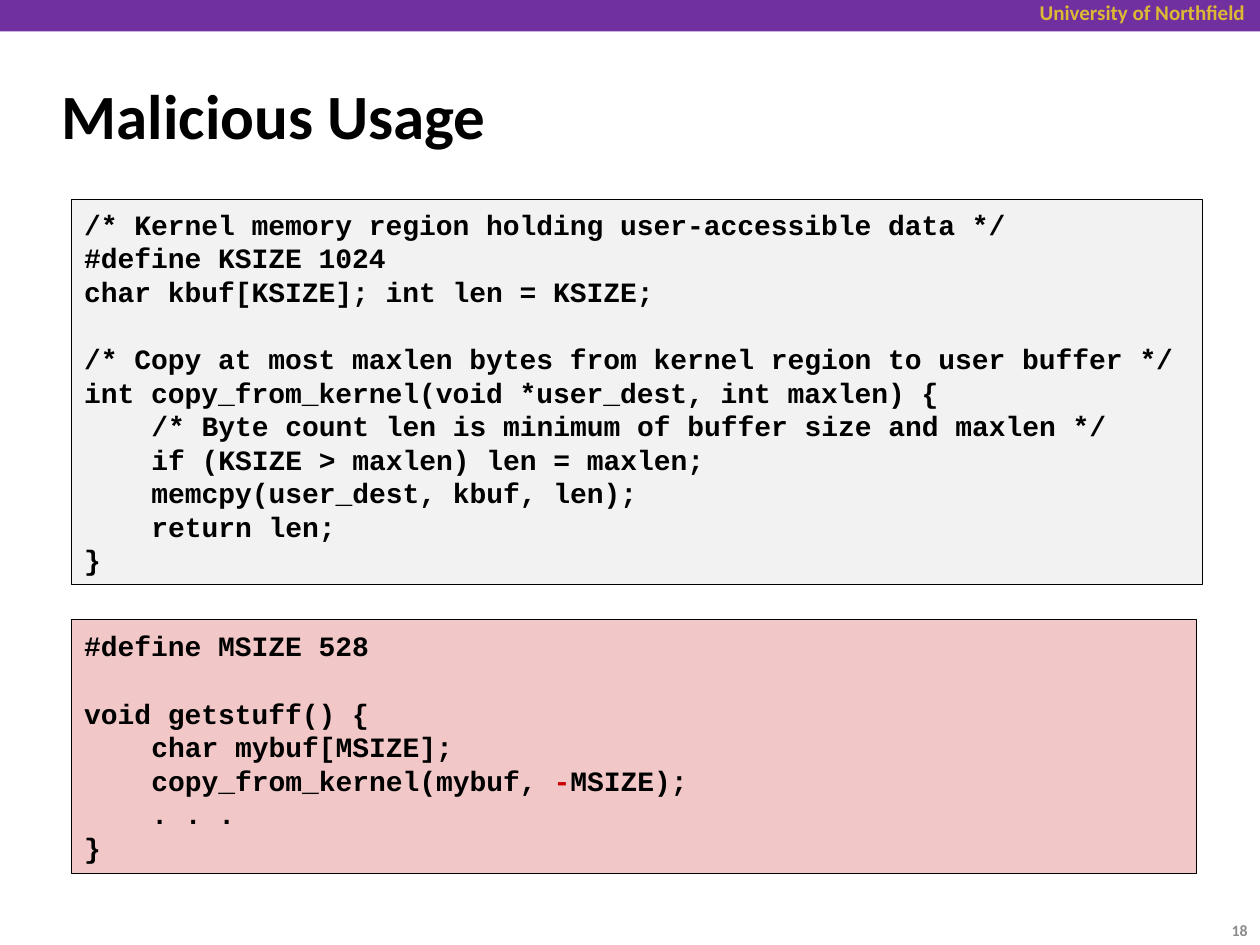
from dataclasses import dataclass

from pptx import Presentation
from pptx import util as u
from pptx.dml.color import RGBColor
from pptx.enum import shapes, text


@dataclass(frozen=True)
class Theme:
    sans: str = "Calibri"
    mono: str = "Courier New"
    ink: str = "000000"
    purple: str = "7030A0"
    gold: str = "DCB834"
    gray: str = "8C8C8C"
    alert: str = "CC0000"
    pale_gray: str = "F2F2F2"
    pale_red: str = "F1C7C7"
    title_size: float = 36
    code_size: float = 16
    code_line: float = 19.2
    header_size: float = 12
    number_size: float = 9


KERNEL_CODE = """/* Kernel memory region holding user-accessible data */
#define KSIZE 1024
char kbuf[KSIZE]; int len = KSIZE;

/* Copy at most maxlen bytes from kernel region to user buffer */
int copy_from_kernel(void *user_dest, int maxlen) {
    /* Byte count len is minimum of buffer size and maxlen */
    if (KSIZE > maxlen) len = maxlen;
    memcpy(user_dest, kbuf, len);
    return len;
}"""

ATTACK_CODE = """#define MSIZE 528

void getstuff() {
    char mybuf[MSIZE];
    copy_from_kernel(mybuf, -MSIZE);
    . . .
}"""


def write(paragraph, content, *, font, size, color, bold=True, align=text.PP_ALIGN.LEFT):
    paragraph.alignment = align
    run = paragraph.add_run()
    run.text = content
    run.font.name = font
    run.font.size = u.Pt(size)
    run.font.bold = bold
    run.font.color.rgb = RGBColor.from_string(color)


class SlideBuilder:
    """Draws styled elements on the current slide."""

    def __init__(self, slide, theme):
        self.slide = slide
        self.theme = theme

    def title(self, content, box):
        shape = self.slide.shapes.title
        shape.left, shape.top, shape.width, shape.height = map(u.Inches, box)
        shape.text_frame.vertical_anchor = text.MSO_ANCHOR.MIDDLE
        write(shape.text_frame.paragraphs[0], content, font=self.theme.sans,
              size=self.theme.title_size, color=self.theme.ink)

    def rectangle(self, box, fill, line=None):
        shape = self.slide.shapes.add_shape(
            shapes.MSO_SHAPE.RECTANGLE, *map(u.Inches, box))
        shape.shadow.inherit = False
        shape.fill.solid()
        shape.fill.fore_color.rgb = RGBColor.from_string(fill)
        if line:
            shape.line.color.rgb = RGBColor.from_string(line)
            shape.line.width = u.Pt(0.5)
        else:
            shape.line.fill.background()
        return shape

    def label(self, content, box, size, color, anchor=text.MSO_ANCHOR.TOP):
        frame = self.slide.shapes.add_textbox(*map(u.Inches, box)).text_frame
        frame.word_wrap = True
        frame.vertical_anchor = anchor
        write(frame.paragraphs[0], content, font=self.theme.sans, size=size,
              color=color, align=text.PP_ALIGN.RIGHT)

    def code(self, source, box, fill, alert=None):
        theme = self.theme
        frame = self.rectangle(box, fill, theme.ink).text_frame
        frame.word_wrap = True
        frame.vertical_anchor = text.MSO_ANCHOR.MIDDLE
        style = {"font": theme.mono, "size": theme.code_size}
        paragraph = frame.paragraphs[0]
        gap = 0
        for number, line in enumerate(source.splitlines()):
            if not line:
                gap = theme.code_line
                continue
            if number:
                paragraph = frame.add_paragraph()
            paragraph.line_spacing = u.Pt(theme.code_line)
            paragraph.space_before = u.Pt(gap)
            gap = 0
            content = line.lstrip()
            indent = (len(line) - len(content)) * 0.6 * theme.code_size
            properties = paragraph._p.get_or_add_pPr()
            properties.set("marL", str(u.Pt(indent)))
            properties.set("indent", "0")
            before, mark, after = content.partition(alert) if alert else (content, "", "")
            for part, color in ((before, theme.ink), (mark, theme.alert), (after, theme.ink)):
                if part:
                    write(paragraph, part, color=color, **style)


def main():
    theme = Theme()
    presentation = Presentation()
    presentation.slide_width = u.Inches(10)
    presentation.slide_height = u.Inches(7.5)
    slide = presentation.slides.add_slide(presentation.slide_layouts[5])
    builder = SlideBuilder(slide, theme)
    builder.rectangle((0, 0, 10, 0.25), theme.purple)
    builder.label("University of Northfield", (7.33, -0.05, 2.65, 0.3),
                  theme.header_size, theme.gold)
    builder.title("Malicious Usage", (0.39, 0.49, 9.19, 0.83))
    builder.label("18", (9.33, 7.18, 0.67, 0.4), theme.number_size, theme.gray,
                  text.MSO_ANCHOR.MIDDLE)
    builder.code(KERNEL_CODE, (0.57, 1.58, 8.97, 3.06), theme.pale_gray)
    builder.code(ATTACK_CODE, (0.57, 4.92, 8.93, 2.01), theme.pale_red, alert="-")
    presentation.save("out.pptx")


if __name__ == "__main__":
    main()
